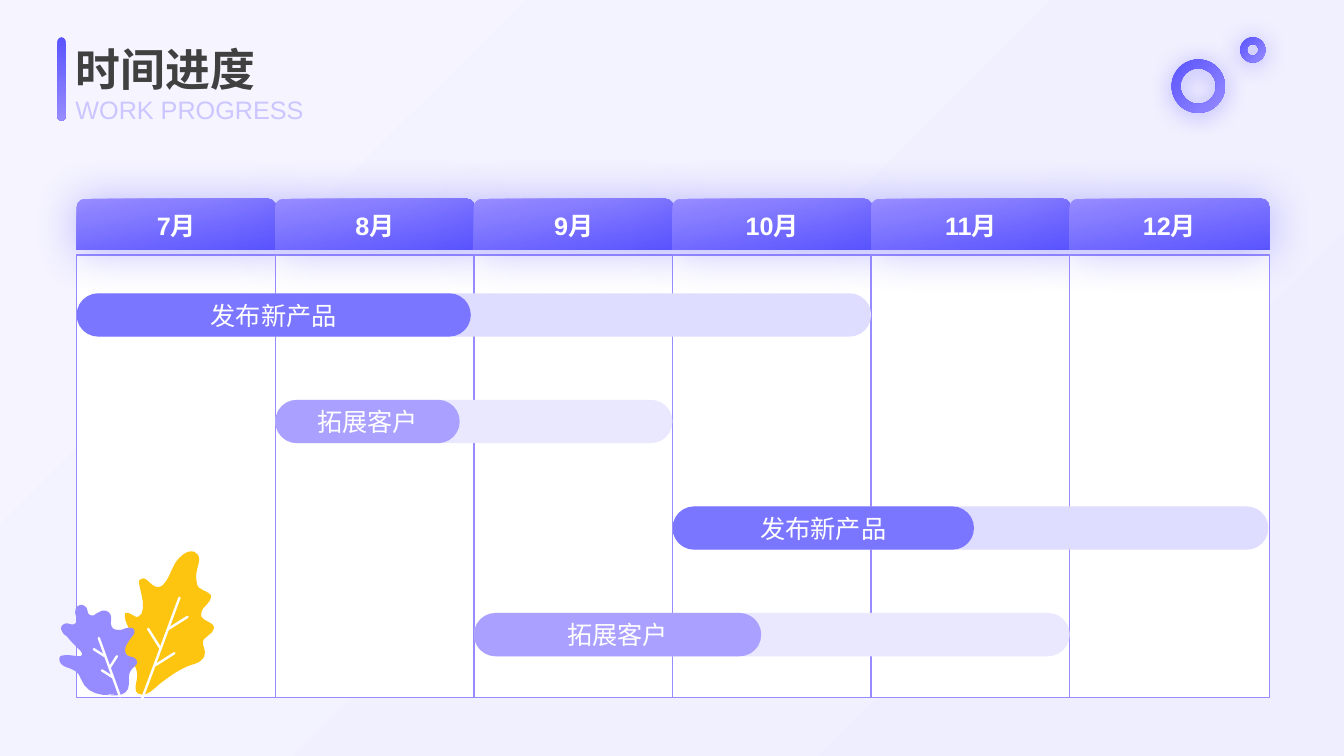
from itertools import chain

from lxml.etree import SubElement
from pptx import Presentation
from pptx.dml.color import RGBColor
from pptx.enum.shapes import MSO_CONNECTOR, MSO_SHAPE
from pptx.enum.text import MSO_ANCHOR, PP_ALIGN
from pptx.oxml.ns import qn
from pptx.util import Inches, Pt

# Content
TITLE, SUBTITLE = "时间进度", "WORK PROGRESS"
MONTHS = ["7月", "8月", "9月", "10月", "11月", "12月"]
INDIGO, LILAC, WHITE = "5A54FF", "978CFF", "FFFFFF"
LAUNCH = ("发布新产品", "DEDDFF", INDIGO, 75)
CLIENTS = ("拓展客户", "EAE8FF", LILAC, 78)
# (task style, first month, months planned, inches done)
TASKS = [(LAUNCH, 0, 4, 3.91), (CLIENTS, 1, 2, 1.83),
         (LAUNCH, 3, 3, 2.99), (CLIENTS, 2, 3, 2.85)]
RINGS = [(11.62, 0.59, 0.53, 0.167), (12.3, 0.37, 0.25, 0.27)]

# Leaves: outline start, then Bezier curves (two controls and an end point)
YELLOW_LEAF = ("FDC510", (1.27, 6.51), [
    (1.23, 6.47, 1.19, 6.43, 1.18, 6.38), (1.18, 6.35, 1.19, 6.31, 1.22, 6.31),
    (1.23, 6.31, 1.24, 6.32, 1.26, 6.32), (1.3, 6.35, 1.3, 6.29, 1.29, 6.26),
    (1.27, 6.21, 1.23, 6.15, 1.24, 6.09), (1.24, 6.08, 1.25, 6.08, 1.26, 6.08),
    (1.3, 6.08, 1.34, 6.13, 1.37, 6.12), (1.47, 6.08, 1.39, 5.86, 1.38, 5.79),
    (1.38, 5.78, 1.38, 5.77, 1.38, 5.76), (1.4, 5.74, 1.43, 5.73, 1.45, 5.75),
    (1.48, 5.77, 1.5, 5.8, 1.54, 5.82), (1.57, 5.83, 1.6, 5.82, 1.62, 5.8),
    (1.68, 5.74, 1.7, 5.64, 1.75, 5.57), (1.79, 5.51, 1.9, 5.42, 1.96, 5.5),
    (1.99, 5.54, 1.97, 5.59, 1.96, 5.63), (1.95, 5.67, 1.94, 5.72, 1.95, 5.76),
    (1.95, 5.79, 1.96, 5.83, 1.99, 5.84), (2.04, 5.88, 2.13, 5.88, 2.08, 5.96),
    (2.06, 5.99, 2.04, 6.01, 2.02, 6.03), (2, 6.06, 1.99, 6.09, 2, 6.12),
    (2.02, 6.17, 2.17, 6.18, 2.11, 6.26), (2.1, 6.28, 2.08, 6.29, 2.06, 6.31),
    (1.96, 6.37, 2.05, 6.42, 2.03, 6.5), (2.02, 6.53, 2, 6.55, 1.97, 6.57),
    (1.93, 6.59, 1.88, 6.6, 1.84, 6.62), (1.75, 6.66, 1.67, 6.72, 1.59, 6.78),
    (1.54, 6.82, 1.45, 6.93, 1.37, 6.88), (1.32, 6.85, 1.36, 6.76, 1.36, 6.72),
    (1.37, 6.63, 1.32, 6.57, 1.27, 6.51),
], [(1.41, 6.93, 1.78, 5.93), (1.67, 6.24, 1.86, 6.12),
    (1.54, 6.6, 1.73, 6.48), (1.47, 6.24, 1.59, 6.43)])
LILAC_LEAF = (LILAC, (1.17, 6.89), [
    (1.01, 6.91, 0.86, 6.89, 0.8, 6.73), (0.78, 6.67, 0.74, 6.65, 0.69, 6.63),
    (0.66, 6.62, 0.63, 6.61, 0.61, 6.59), (0.59, 6.57, 0.58, 6.53, 0.6, 6.51),
    (0.62, 6.5, 0.65, 6.5, 0.67, 6.5), (0.71, 6.5, 0.75, 6.51, 0.79, 6.51),
    (0.82, 6.51, 0.82, 6.48, 0.8, 6.46), (0.75, 6.41, 0.7, 6.36, 0.66, 6.31),
    (0.64, 6.3, 0.62, 6.28, 0.61, 6.25), (0.6, 6.23, 0.61, 6.2, 0.64, 6.19),
    (0.67, 6.17, 0.71, 6.21, 0.74, 6.19), (0.76, 6.18, 0.77, 6.15, 0.76, 6.13),
    (0.75, 6.1, 0.74, 6.08, 0.75, 6.05), (0.75, 6.03, 0.77, 6.01, 0.8, 6),
    (0.82, 6, 0.84, 6.01, 0.86, 6.03), (0.87, 6.06, 0.87, 6.09, 0.89, 6.1),
    (0.91, 6.11, 0.94, 6.11, 0.95, 6.09), (0.97, 6.08, 0.99, 6.07, 1.01, 6.06),
    (1.05, 6.05, 1.09, 6.07, 1.1, 6.11), (1.11, 6.14, 1.09, 6.19, 1.11, 6.22),
    (1.12, 6.25, 1.17, 6.25, 1.2, 6.25), (1.23, 6.24, 1.27, 6.22, 1.3, 6.23),
    (1.32, 6.23, 1.33, 6.24, 1.33, 6.25), (1.34, 6.26, 1.33, 6.28, 1.33, 6.29),
    (1.31, 6.32, 1.28, 6.35, 1.26, 6.39), (1.24, 6.42, 1.23, 6.47, 1.26, 6.5),
    (1.28, 6.51, 1.3, 6.52, 1.32, 6.52), (1.34, 6.53, 1.36, 6.55, 1.36, 6.57),
    (1.36, 6.6, 1.32, 6.62, 1.3, 6.65), (1.27, 6.69, 1.28, 6.74, 1.28, 6.78),
    (1.28, 6.91, 1.15, 6.91, 1.05, 6.89),
], [(1.19, 6.91, 0.98, 6.33), (0.93, 6.44, 1.04, 6.51),
    (1.01, 6.65, 1.12, 6.72), (1.09, 6.62, 1.16, 6.51)])

# Layout
GRID_LEFT, MONTH_STEP, MONTH_WIDTH = 0.76, 1.97, 1.98
BAR_TOP, BAR_STEP, BAR_HEIGHT = 2.91, 1.057, 0.43

prs = Presentation()
prs.slide_width, prs.slide_height = Inches(13.33), Inches(7.5)
slide = prs.slides.add_slide(prs.slide_layouts[5])
shapes = slide.shapes


def rgb(value):
    return RGBColor.from_string(value)


def paint(fill, start, end=None, angle=0):
    """Solid fill, or a gradient with a clockwise angle when end is given."""
    if end is None:
        fill.solid()
        fill.fore_color.rgb = rgb(start)
        return
    fill.gradient()
    fill.gradient_angle = 360 - angle
    for stop, value in zip(fill.gradient_stops, (start, end)):
        stop.color.rgb = rgb(value)


def add_part(preset, box, *colors, adjust=None):
    part = shapes.add_shape(preset, *map(Inches, box))
    part.shadow.inherit = False
    part.line.fill.background()
    paint(part.fill, *colors)
    if adjust is not None:
        part.adjustments[0] = adjust
    return part


def add_glow(part, color, alpha, blur, distance):
    effects = part._element.spPr.find(qn("a:effectLst"))
    glow = SubElement(effects, qn("a:outerShdw"), blurRad=str(Pt(blur)),
                      dist=str(Pt(distance)), dir="5400000", algn="t", rotWithShape="0")
    tint = SubElement(glow, qn("a:srgbClr"), val=color)
    SubElement(tint, qn("a:alpha"), val=str(alpha * 1000))


def write(part, words, size, color, bold=False, align=PP_ALIGN.CENTER):
    frame = part.text_frame
    frame.text = words
    frame.word_wrap = True
    frame.vertical_anchor = MSO_ANCHOR.MIDDLE
    paragraph = frame.paragraphs[0]
    paragraph.alignment = align
    font = paragraph.runs[0].font
    font.name, font.size, font.bold = "Arial", Pt(size), bold
    font.color.rgb = rgb(color)


def curve_points(start, curves, steps=6):
    x0, y0 = start
    for x1, y1, x2, y2, x3, y3 in curves:
        for t in (step / steps for step in range(1, steps + 1)):
            u = 1 - t
            weights = (u ** 3, 3 * u * u * t, 3 * u * t * t, t ** 3)
            yield tuple(Inches(sum(w * v for w, v in zip(weights, values)))
                        for values in ((x0, x1, x2, x3), (y0, y1, y2, y3)))
        x0, y0 = x3, y3


def add_leaf(color, start, curves, veins):
    builder = shapes.build_freeform(*map(Inches, start))
    builder.add_line_segments(list(curve_points(start, curves)), close=True)
    leaf = builder.convert_to_shape()
    leaf.shadow.inherit = False
    leaf.line.fill.background()
    paint(leaf.fill, color)
    for ends in veins:
        vein = shapes.add_connector(MSO_CONNECTOR.STRAIGHT, *map(Inches, ends))
        vein.line.color.rgb = rgb(WHITE)
        vein.line.width = Pt(1.7)
        vein.line._get_or_add_ln().set("cap", "rnd")
        SubElement(vein._element.spPr, qn("a:effectLst"))


# Background, accent bar and rings
paint(slide.background.fill, "F5F4FF", "EEEEFF", 45)
add_part(MSO_SHAPE.ROUNDED_RECTANGLE, (0.57, 0.37, 0.08, 0.83), INDIGO, LILAC, 90, adjust=0.5)
for left, top, size, thickness in RINGS:
    ring = add_part(MSO_SHAPE.DONUT, (left, top, size, size), INDIGO, LILAC, 45, adjust=thickness)
    add_glow(ring, LILAC, 74, 16, 2)

# Headings
title = shapes.title
title.left, title.top, title.width, title.height = map(Inches, (0.65, 0.4, 3.77, 0.56))
write(title, TITLE, 32, "404040", True, PP_ALIGN.LEFT)
subtitle = shapes.add_textbox(*map(Inches, (0.65, 0.93, 3.84, 0.31)))
write(subtitle, SUBTITLE, 18, "CBC6FF", align=PP_ALIGN.LEFT)

# Month columns
for index, month in enumerate(MONTHS):
    left = GRID_LEFT + index * MONTH_STEP
    column = add_part(MSO_SHAPE.RECTANGLE, (left, 2.53, MONTH_WIDTH, 4.39), WHITE)
    column.line.color.rgb = rgb(LILAC)
    column.line.width = Pt(1)
    header = add_part(MSO_SHAPE.ROUND_2_SAME_RECTANGLE, (left, 1.97, MONTH_WIDTH, 0.51),
                      LILAC, INDIGO, 80)
    add_glow(header, INDIGO, 40, 32, 1)
    write(header, month, 18, WHITE, True)

# Task bars: planned span, then the part that is done
for row, ((task, planned_color, done_color, opacity), first, span, done) in enumerate(TASKS):
    left, top = GRID_LEFT + first * MONTH_STEP, BAR_TOP + row * BAR_STEP
    for width, color in ((span * MONTH_STEP, planned_color), (done, done_color)):
        bar = add_part(MSO_SHAPE.ROUNDED_RECTANGLE, (left, top, width, BAR_HEIGHT),
                       color, adjust=0.5)
    tint = next(chain(bar._element.spPr.iter(qn("a:srgbClr"))))
    SubElement(tint, qn("a:alpha"), val=str(opacity * 1000))
    write(bar, task, 18, WHITE)

# Leaves
for leaf_parts in (YELLOW_LEAF, LILAC_LEAF):
    add_leaf(*leaf_parts)

prs.save("out.pptx")
